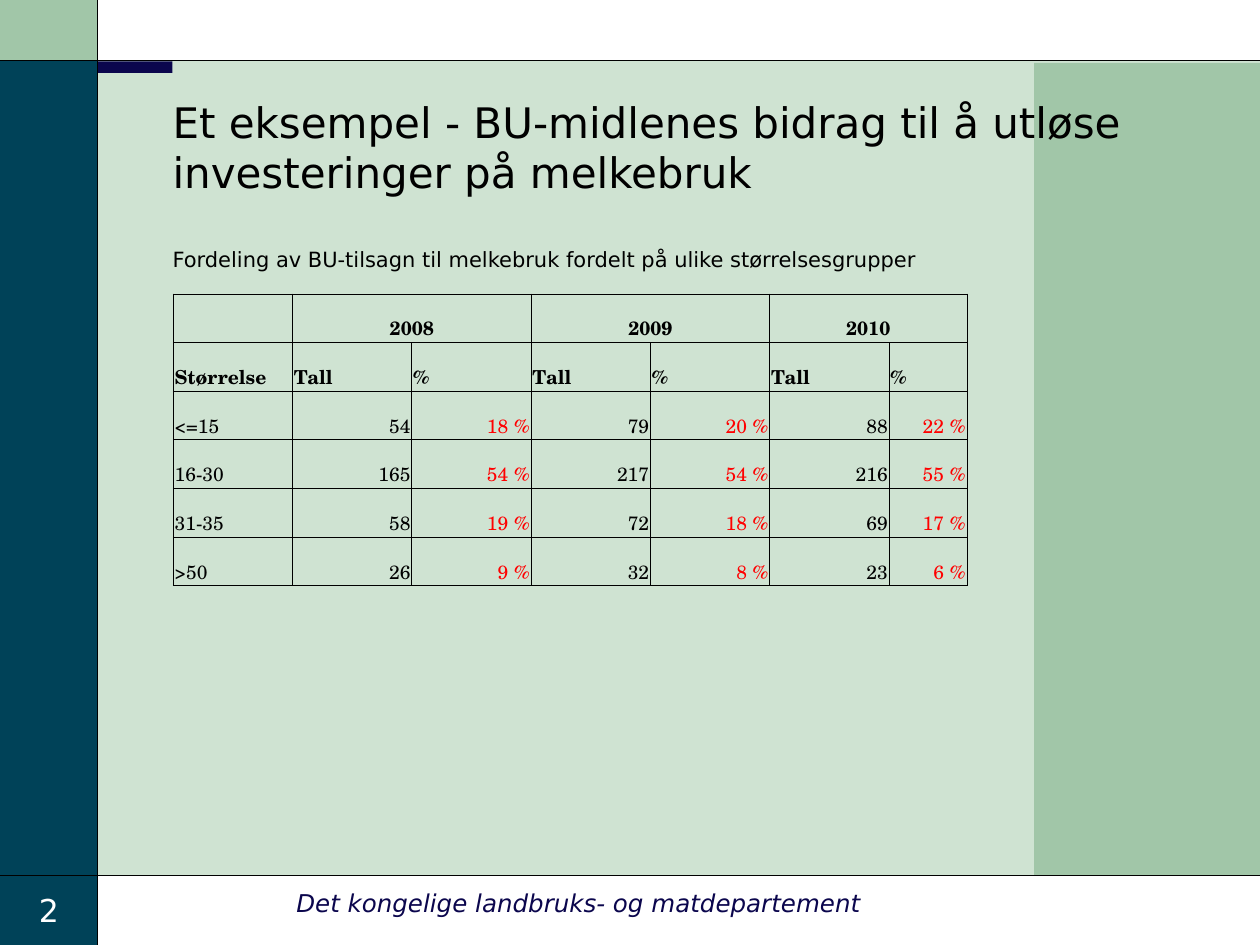
from dataclasses import dataclass

import pptx
import pptx.dml.color
import pptx.enum.shapes
import pptx.enum.text
import pptx.oxml
import pptx.oxml.ns
import pptx.util
from lxml import etree

Pt = pptx.util.Pt
ALIGN = pptx.enum.text.PP_ALIGN
ANCHOR = pptx.enum.text.MSO_ANCHOR


@dataclass(frozen=True)
class Theme:
    black: str = "000000"
    white: str = "FFFFFF"
    pale_green: str = "CFE3D2"
    green: str = "A1C6A8"
    petrol: str = "004258"
    navy: str = "0B064D"
    red: str = "FF0000"
    sans: str = "DejaVu Sans"
    serif: str = "TeX Gyre Schola"
    title_size: int = 24
    number_size: int = 18
    footer_size: int = 14
    subtitle_size: int = 12
    table_size: int = 11


THEME = Theme()
SLIDE_WIDTH, SLIDE_HEIGHT = 720, 540
RAIL_WIDTH = 55.6
TOP_RULE, BOTTOM_RULE = 34.5, 500.2

YEARS = ["2008", "2009", "2010"]
HEADINGS = ["Størrelse"] + ["Tall", "%"] * len(YEARS)
SIZE_GROUPS = [
    ["<=15", "54", "18 %", "79", "20 %", "88", "22 %"],
    ["16-30", "165", "54 %", "217", "54 %", "216", "55 %"],
    ["31-35", "58", "19 %", "72", "18 %", "69", "17 %"],
    [">50", "26", "9 %", "32", "8 %", "23", "6 %"],
]


def rgb(color):
    return pptx.dml.color.RGBColor.from_string(color)


def write(paragraph, text, size, color, font=THEME.sans, align=ALIGN.LEFT,
          bold=False, italic=False):
    paragraph.text = text
    paragraph.alignment = align
    for run in paragraph.runs:
        run.font.name = font
        run.font.size = Pt(size)
        run.font.bold = bold
        run.font.italic = italic
        run.font.color.rgb = rgb(color)


def add_panel(slide, left, top, width, height, color):
    panel = slide.shapes.add_shape(
        pptx.enum.shapes.MSO_SHAPE.RECTANGLE,
        Pt(left), Pt(top), Pt(width), Pt(height))
    panel.shadow.inherit = False
    panel.fill.solid()
    panel.fill.fore_color.rgb = rgb(color)
    panel.line.fill.background()
    return panel


def add_rule(slide, x1, y1, x2, y2):
    rule = slide.shapes.add_connector(
        pptx.enum.shapes.MSO_CONNECTOR.STRAIGHT, Pt(x1), Pt(y1), Pt(x2), Pt(y2))
    rule.line.color.rgb = rgb(THEME.black)
    rule.line.width = Pt(0.75)
    etree.SubElement(rule._element.spPr, pptx.oxml.ns.qn("a:effectLst"))


def add_backdrop(slide):
    add_panel(slide, RAIL_WIDTH, TOP_RULE, SLIDE_WIDTH - RAIL_WIDTH,
              BOTTOM_RULE - TOP_RULE, THEME.pale_green)
    add_panel(slide, 0, 0, RAIL_WIDTH, 43, THEME.green)
    add_panel(slide, 0, TOP_RULE, RAIL_WIDTH, SLIDE_HEIGHT - TOP_RULE, THEME.petrol)
    add_rule(slide, RAIL_WIDTH, 0, RAIL_WIDTH, SLIDE_HEIGHT)
    add_panel(slide, 56, 35, 42.5, 6.6, THEME.navy)
    add_panel(slide, 591, 36, SLIDE_WIDTH - 591, BOTTOM_RULE - 36, THEME.green)
    for y in (BOTTOM_RULE, TOP_RULE):
        add_rule(slide, 0, y, SLIDE_WIDTH, y)


def add_slide_number(slide, number):
    box = slide.shapes.add_textbox(Pt(0), Pt(505.5), Pt(56), Pt(29))
    box.text_frame.word_wrap = True
    write(box.text_frame.paragraphs[0], number, THEME.number_size, THEME.white,
          align=ALIGN.CENTER)


def add_footer(slide, text):
    footer = add_panel(slide, 69, 504, 523.4, 24, THEME.white)
    footer.text_frame.vertical_anchor = ANCHOR.TOP
    write(footer.text_frame.paragraphs[0], text, THEME.footer_size, THEME.navy,
          align=ALIGN.CENTER, italic=True)


def place_title(slide, heading, subtitle):
    """Fill the title placeholder and bring it in front of the backdrop."""
    title = slide.shapes.title
    title.left, title.top, title.width, title.height = Pt(91.4), Pt(84.2), Pt(597.6), Pt(41.8)
    frame = title.text_frame
    frame.auto_size = pptx.enum.text.MSO_AUTO_SIZE.NONE
    frame.word_wrap = True
    frame.vertical_anchor = ANCHOR.MIDDLE
    write(frame.paragraphs[0], heading, THEME.title_size, THEME.black)
    caption = frame.add_paragraph()
    write(caption, subtitle, THEME.subtitle_size, THEME.black)
    caption.space_before = Pt(28)
    slide.shapes._spTree.append(title._element)


def format_cell(cell):
    cell.fill.background()
    cell.vertical_anchor = ANCHOR.BOTTOM
    cell.margin_left = cell.margin_right = cell.margin_top = Pt(0.75)
    cell.margin_bottom = Pt(0)
    properties = cell._tc.get_or_add_tcPr()
    for position, side in enumerate(("lnL", "lnR", "lnT", "lnB")):
        properties.insert(position, pptx.oxml.parse_xml(
            f'<a:{side} {pptx.oxml.ns.nsdecls("a")} w="{Pt(0.5)}"><a:solidFill>'
            f'<a:srgbClr val="{THEME.black}"/></a:solidFill></a:{side}>'))


def write_cell(cell, text, color=THEME.black, align=ALIGN.LEFT, bold=False):
    write(cell.text_frame.paragraphs[0], text, THEME.table_size, color,
          THEME.serif, align, bold)


def add_grants_table(slide):
    column_widths = [68.2] * 6 + [44.5]
    row_height = 27.8
    row_count = len(SIZE_GROUPS) + 2
    grants = slide.shapes.add_table(
        row_count, len(column_widths), Pt(99), Pt(168),
        Pt(sum(column_widths)), Pt(row_height * row_count)).table
    grants.first_row = grants.horz_banding = False
    for column, width in zip(grants.columns, column_widths):
        column.width = Pt(width)
    for row in grants.rows:
        row.height = Pt(row_height)
    for cell in grants.iter_cells():
        format_cell(cell)

    for index, year in enumerate(YEARS):
        first = 1 + 2 * index
        grants.cell(0, first).merge(grants.cell(0, first + 1))
        write_cell(grants.cell(0, first), year, align=ALIGN.CENTER, bold=True)
    for column, heading in enumerate(HEADINGS):
        write_cell(grants.cell(1, column), heading, bold=True)
    for row, group in enumerate(SIZE_GROUPS, start=2):
        for column, value in enumerate(group):
            write_cell(grants.cell(row, column), value,
                       THEME.red if HEADINGS[column] == "%" else THEME.black,
                       ALIGN.RIGHT if column else ALIGN.LEFT)


def main():
    deck = pptx.Presentation()
    deck.slide_width, deck.slide_height = Pt(SLIDE_WIDTH), Pt(SLIDE_HEIGHT)
    slide = deck.slides.add_slide(deck.slide_layouts.get_by_name("Title Only"))
    add_backdrop(slide)
    add_slide_number(slide, "2")
    add_footer(slide, "Det kongelige landbruks- og matdepartement")
    place_title(slide,
                "Et eksempel - BU-midlenes bidrag til å utløse investeringer på melkebruk",
                "Fordeling av BU-tilsagn til melkebruk fordelt på ulike størrelsesgrupper")
    add_grants_table(slide)
    deck.save("out.pptx")


if __name__ == "__main__":
    main()
